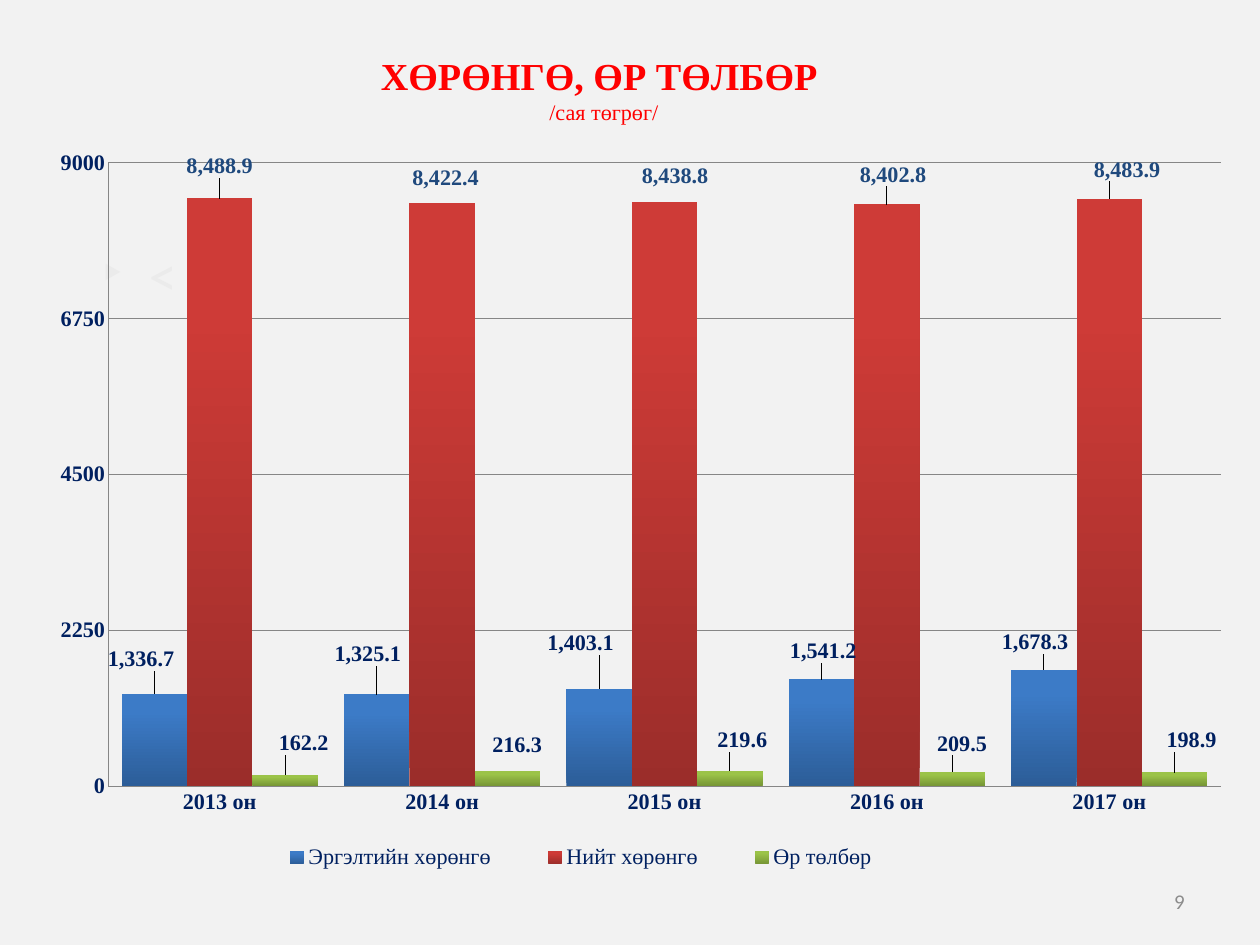
from dataclasses import dataclass
from lxml.etree import SubElement
from pptx import Presentation
from pptx.chart.chart import Chart
from pptx.chart.data import CategoryChartData as Data
from pptx.dml.color import RGBColor as Color
from pptx.enum.chart import XL_CHART_TYPE as Kind
from pptx.enum.chart import XL_LABEL_POSITION as Spot
from pptx.enum.chart import XL_LEGEND_POSITION as Side
from pptx.enum.chart import XL_TICK_MARK as Tick
from pptx.enum.text import MSO_ANCHOR as Anchor
from pptx.enum.text import MSO_AUTO_SIZE as Fit
from pptx.enum.text import PP_ALIGN as Align
from pptx.oxml import parse_xml
from pptx.oxml.ns import nsdecls, qn
from pptx.util import Inches, Pt


@dataclass(frozen=True)
class Theme:
    serif: str = "Times New Roman"
    sans: str = "Calibri"
    back: str = "F2F2F2"
    title: str = "FF0000"
    navy: str = "002060"
    steel: str = "1F497D"
    faint: str = "EBEBEB"
    grey: str = "8C8C8C"
    line: str = "868686"
    head: int = 31
    text: int = 18
    page: int = 17
    mark: int = 46


@dataclass(frozen=True)
class Box:
    left: float
    top: float
    width: float
    height: float

    def place(self) -> tuple:
        return tuple(map(Inches, (self.left, self.top, self.width, self.height)))


@dataclass(frozen=True)
class Row:
    name: str
    vals: tuple
    dark: str
    light: str
    ink: str
    shifts: tuple


LOOK = Theme()
YEARS = [f"{year} он" for year in range(2013, 2018)]
FORMAT = "#,##0.0"
AREA = Box(0.28, 1.5, 13.5, 8.48)
PLOT = Box(0.07, 0.04, 0.93, 0.83)
KEY = Box(0.18, 0.93, 0.57, 0.07)
ROWS = (
    Row("Эргэлтийн хөрөнгө", (1336.7, 1325.1, 1403.1, 1541.2, 1678.3),
        "2C5D98", "3C7BC7", LOOK.navy,
        ((-0.15, -0.21), (-0.1, -0.28), (-0.21, -0.34), (0.02, -0.14), (-0.1, -0.14))),
    Row("Нийт хөрөнгө", (8488.9, 8422.4, 8438.8, 8402.8, 8483.9),
        "9B2D2A", "CE3B37", LOOK.steel,
        ((0, -0.19), (0.04, -0.1), (0.12, -0.12), (0.07, -0.16), (0.2, -0.15))),
    Row("Өр төлбөр", (162.2, 216.3, 219.6, 209.5, 198.9),
        "769535", "9BC348", LOOK.navy,
        ((0.21, -0.18), (0.11, -0.12), (0.14, -0.17), (0.11, -0.14), (0.19, -0.19))),
)


def style(font, size: int, ink: str, face: str = LOOK.serif, bold: bool = False) -> None:
    font.size, font.name, font.bold = Pt(size), face, bold
    font.color.rgb = Color.from_string(ink)


def settle(shape, box: Box, anchor=Anchor.TOP):
    shape.left, shape.top, shape.width, shape.height = box.place()
    frame = shape.text_frame
    frame.word_wrap, frame.auto_size = True, Fit.NONE
    frame.vertical_anchor = anchor
    frame.margin_left = frame.margin_right = Inches(0.14)
    frame.margin_top = frame.margin_bottom = Inches(0.07)
    return frame.paragraphs[0]


def layout(**parts):
    inner = "".join(f'<c:{tag} val="{val}"/>' for tag, val in parts.items())
    return parse_xml(f'<c:layout {nsdecls("c")}><c:manualLayout>{inner}'
                     "</c:manualLayout></c:layout>")


def swap(node, box: Box, after: str = "", **extra) -> None:
    for old in node.findall(qn("c:layout")):
        node.remove(old)
    spot = list(node).index(node.find(qn(after))) + 1 if after else 0
    node.insert(spot, layout(**extra, xMode="edge", yMode="edge", x=box.left,
                             y=box.top, w=box.width, h=box.height))


def paint(series, row: Row) -> None:
    fill = series.format.fill
    fill.gradient()
    fill.gradient_angle = 90
    for stop, ink, place in zip(fill.gradient_stops, (row.dark, row.light), (0, 0.8)):
        stop.color.rgb = Color.from_string(ink)
        stop.position = place
    series.invert_if_negative = False
    tags = series.data_labels
    tags.show_value, tags.position = True, Spot.OUTSIDE_END
    tags.number_format, tags.number_format_is_linked = FORMAT, False
    style(tags.font, LOOK.text, row.ink, bold=True)
    for num in range(len(row.vals)):
        tag = series.points[num].data_label
        tag.position = Spot.OUTSIDE_END
        style(tag.font, LOOK.text, row.ink, bold=True)


def shift(chart: Chart) -> None:
    moves = [move for row in ROWS for move in row.shifts]
    for node, (right, down) in zip(chart.element.xpath("//c:dLbl"), moves):
        node.insert(1, layout(x=right / AREA.width, y=down / AREA.height))
        node.insert(2, parse_xml(f'<c:numFmt {nsdecls("c")} formatCode="{FORMAT}" '
                                 'sourceLinked="0"/>'))


def trim(axis) -> None:
    axis.major_tick_mark = axis.minor_tick_mark = Tick.NONE
    axis.format.line.color.rgb = Color.from_string(LOOK.line)
    style(axis.tick_labels.font, LOOK.text, LOOK.navy, bold=True)


def draw(slide) -> None:
    data = Data(number_format="General")
    data.categories = YEARS
    for row in ROWS:
        data.add_series(row.name, row.vals)
    chart = slide.shapes.add_chart(Kind.COLUMN_CLUSTERED, *AREA.place(), data).chart
    chart.has_title = False
    style(chart.font, LOOK.text, LOOK.navy)
    plot = chart.plots[0]
    plot.gap_width, plot.overlap, plot.vary_by_categories = 40, 0, False
    for series, row in zip(plot.series, ROWS):
        paint(series, row)
    shift(chart)
    trim(chart.category_axis)
    axis = chart.value_axis
    trim(axis)
    axis.minimum_scale, axis.maximum_scale, axis.major_unit = 0, 9000, 2250
    axis.has_major_gridlines = True
    axis.major_gridlines.format.line.color.rgb = Color.from_string(LOOK.line)
    chart.has_legend = True
    key = chart.legend
    key.position, key.include_in_layout = Side.BOTTOM, True
    style(key.font, LOOK.text, LOOK.navy)
    swap(chart.element.xpath("//c:plotArea")[0], PLOT, layoutTarget="inner")
    swap(chart.element.xpath("//c:legend")[0], KEY, after="c:legendPos")


def main() -> None:
    deck = Presentation()
    deck.slide_width, deck.slide_height = Inches(14.22), Inches(10.67)
    slide = deck.slides.add_slide(deck.slide_layouts[1])
    slide.background.fill.solid()
    slide.background.fill.fore_color.rgb = Color.from_string(LOOK.back)

    title = settle(slide.shapes.title, Box(0.44, 0.5, 12.75, 1), Anchor.MIDDLE)
    title.alignment = Align.CENTER
    run = title.add_run()
    run.text = "ХӨРӨНГӨ, ӨР ТӨЛБӨР "
    style(run.font, LOOK.head, LOOK.title, bold=True)
    title.add_line_break()
    run = title.add_run()
    run.text = "/сая төгрөг/"
    style(run.font, LOOK.text, LOOK.title)

    body = settle(slide.placeholders[1], Box(1.01, 2.64, 12.19, 5.65))
    body.text = "<"
    body.space_before = Pt(20)
    props = body._p.get_or_add_pPr()
    props.set("marL", str(Inches(0.53)))
    props.set("indent", str(-Inches(0.53)))
    SubElement(props, qn("a:buChar")).set("char", "‣")
    style(body.font, LOOK.mark, LOOK.faint, LOOK.sans)

    spot = Box(10.19, 9.89, 3.32, 0.57)
    page = settle(slide.shapes.add_textbox(*spot.place()), spot, Anchor.MIDDLE)
    page.text, page.alignment = "9", Align.RIGHT
    style(page.font, LOOK.page, LOOK.grey, LOOK.sans)

    draw(slide)
    deck.save("out.pptx")


if __name__ == "__main__":
    main()
